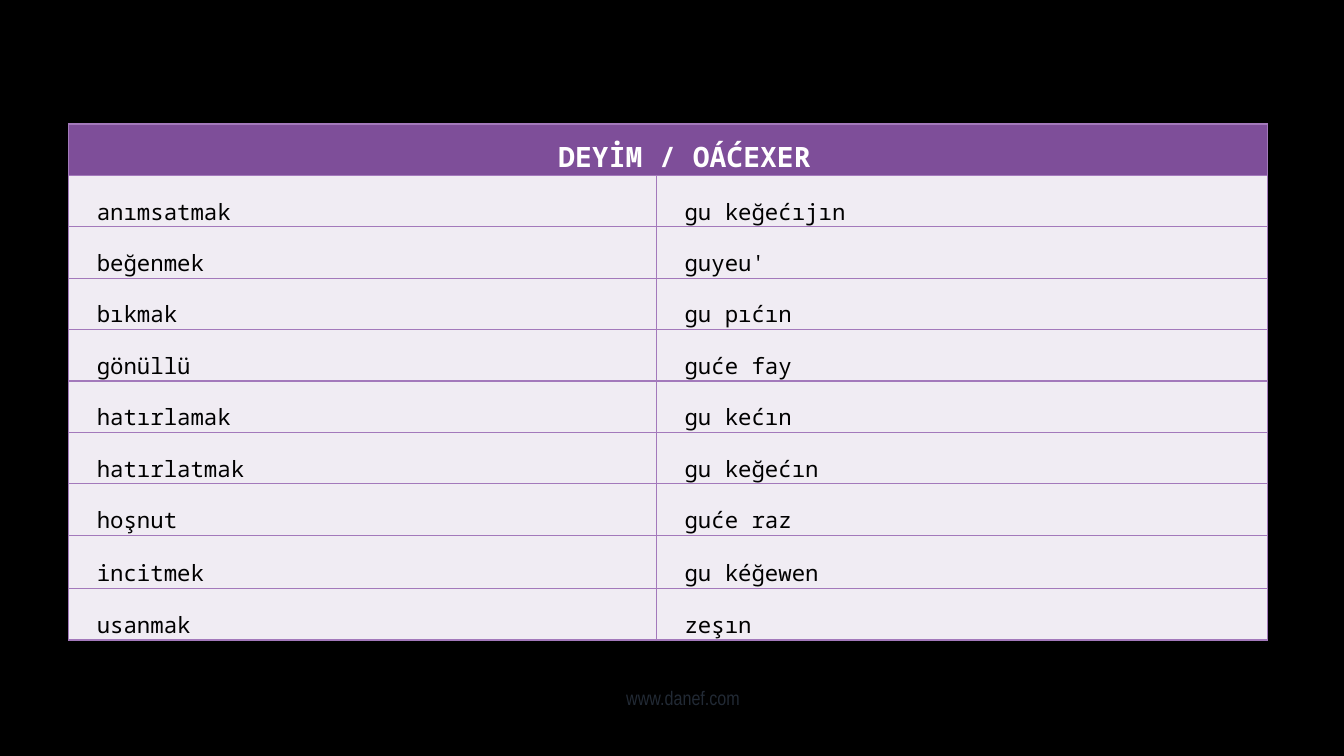
from pptx import Presentation
from pptx.dml.color import RGBColor
from pptx.enum.text import MSO_ANCHOR, PP_ALIGN
from pptx.oxml import parse_xml
from pptx.oxml.ns import nsdecls
from pptx.util import Inches, Pt

COLORS = {
    "background": "000000",
    "header": "7E4E99",
    "body": "F0ECF3",
    "border": "A379BB",
    "header_text": "FFFFFF",
    "body_text": "000000",
    "footer_text": "222A35",
}
PHRASES = [
    ("anımsatmak", "gu keğećıjın"),
    ("beğenmek", "guyeu'"),
    ("bıkmak", "gu pıćın"),
    ("gönüllü", "guće fay"),
    ("hatırlamak", "gu kećın"),
    ("hatırlatmak", "gu keğećın"),
    ("hoşnut", "guće raz"),
    ("incitmek", "gu kéğewen"),
    ("usanmak", "zeşın"),
]


def add_run(p, text, font, size, color, bold=False):
    r = p.add_run()
    r.text = text
    r.font.name = font
    r.font.size = Pt(size)
    r.font.bold = bold
    r.font.color.rgb = RGBColor.from_string(COLORS[color])


def style_cell(cell, fill, indent):
    cell.vertical_anchor = MSO_ANCHOR.BOTTOM
    cell.margin_left = Inches(indent)
    cell.margin_right = cell.margin_top = Inches(0.01)
    cell.margin_bottom = 0
    # Borders come before the fill in the cell properties
    tcPr = cell._tc.get_or_add_tcPr()
    for side in ("lnL", "lnR", "lnT", "lnB"):
        tcPr.append(parse_xml(
            f'<a:{side} {nsdecls("a")} w="{Pt(1)}"><a:solidFill>'
            f'<a:srgbClr val="{COLORS["border"]}"/></a:solidFill></a:{side}>'))
    cell.fill.solid()
    cell.fill.fore_color.rgb = RGBColor.from_string(COLORS[fill])


prs = Presentation()
prs.slide_width, prs.slide_height = Inches(13.33), Inches(7.5)
s = prs.slides.add_slide(prs.slide_layouts[6])
s.background.fill.solid()
s.background.fill.fore_color.rgb = RGBColor.from_string(COLORS["background"])

# Web address
tf = s.shapes.add_textbox(Inches(3.23), Inches(6.64), Inches(7.09), Inches(0.63)).text_frame
tf.word_wrap = True
tf.vertical_anchor = MSO_ANCHOR.MIDDLE
p = tf.paragraphs[0]
p.alignment = PP_ALIGN.CENTER
p.line_spacing = 0.7
add_run(p, "www.danef.com", "Arial Narrow", 14, "footer_text")

# Phrase table
table = s.shapes.add_table(len(PHRASES) + 1, 2, Inches(0.68), Inches(1.23),
                           Inches(11.89), Inches(5.12)).table
table.horz_banding = False
for column, width in zip(table.columns, (5.83, 6.06)):
    column.width = Inches(width)
for row in table.rows:
    row.height = Inches(0.51)
table.rows[8].height = Inches(0.53)

# Header across both columns
header = table.cell(0, 0)
header.merge(table.cell(0, 1))
for cell in table.rows[0].cells:
    style_cell(cell, "header", 0.34)
p = header.text_frame.paragraphs[0]
p.alignment = PP_ALIGN.CENTER
add_run(p, "DEYİM / OÁĆEXER", "Noto Sans Mono", 20, "header_text", True)

# Turkish phrases and their equivalents
for i, pair in enumerate(PHRASES, 1):
    for j, phrase in enumerate(pair):
        cell = table.cell(i, j)
        style_cell(cell, "body", 0.28)
        add_run(cell.text_frame.paragraphs[0], phrase, "Noto Sans Mono", 16, "body_text")

prs.save("out.pptx")
